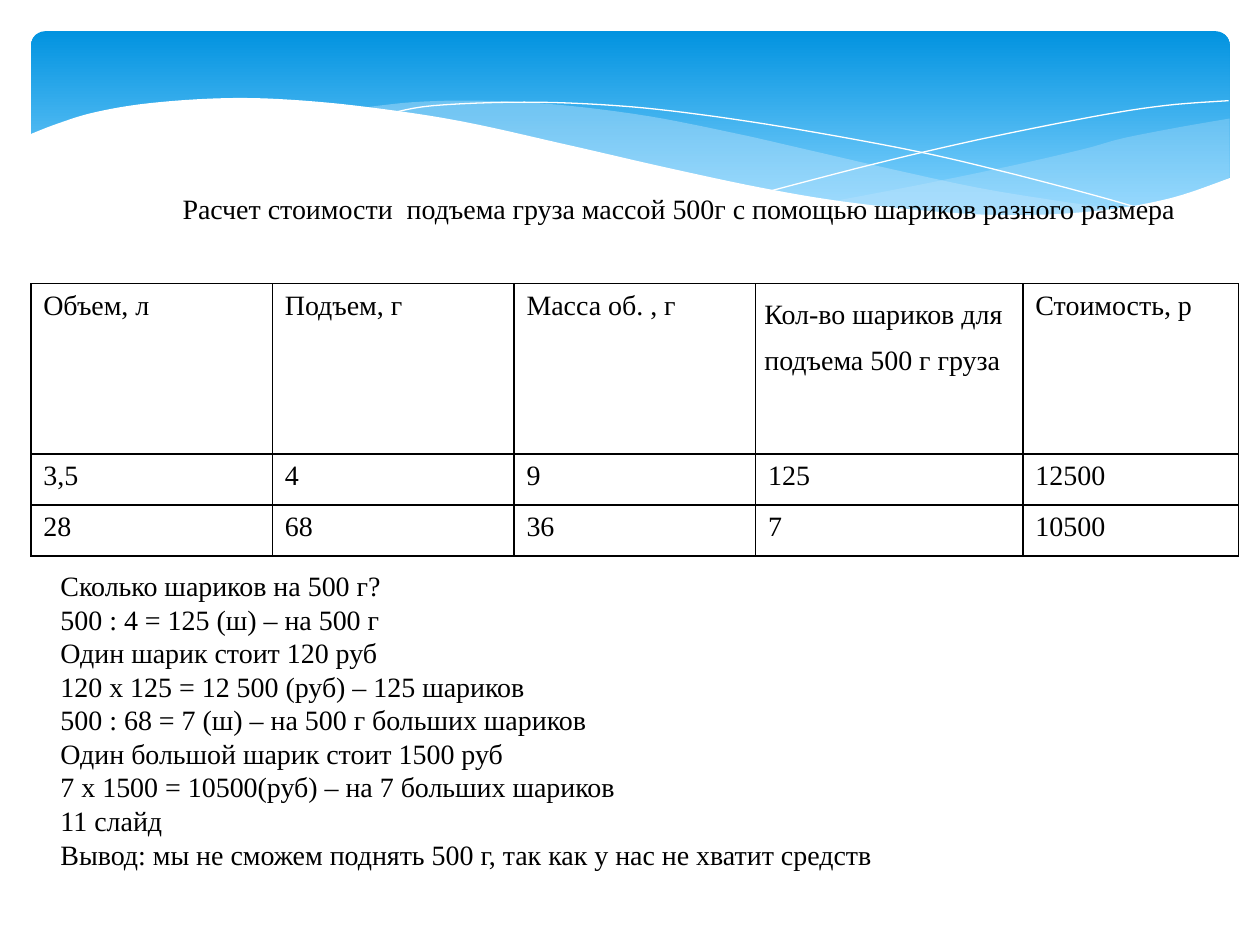
import pptx
import pptx.dml.color
import pptx.enum.shapes
import pptx.oxml
import pptx.oxml.ns
import pptx.util

Cm, Pt = pptx.util.Cm, pptx.util.Pt
qn = pptx.oxml.ns.qn

COLORS = {"deep": "0293E0", "sky": "83D3FE", "haze": "C6E7FC",
          "white": "FFFFFF", "ink": "000000"}

# Curves of the header band, in centimetres
RIGHT_HAZE = [
    [(24.79, 2.39), (23.75, 2.57), (22.63, 2.79), (21.87, 3), (20.45, 3.33),
     (18.52, 3.73), (16.79, 4.06)],
    [(16.79, 4.06), (17.91, 4.19), (19.23, 4.32), (20.68, 4.37),
     (21.92, 4.32), (22.99, 4.14), (23.93, 3.91), (24.79, 3.58)]]
CENTRE_HAZE = [
    [(7.26, 2.18), (8.33, 2.06), (9.65, 2.03), (11.23, 2.11), (13.06, 2.34),
     (14.83, 2.69), (15.98, 2.95), (17.93, 3.4), (19.69, 3.78),
     (21.26, 4.04), (22.68, 4.24)],
    [(22.68, 4.24), (21.77, 4.34), (20.78, 4.39), (19.63, 4.37),
     (18.34, 4.27), (16.89, 4.09), (15.27, 3.81), (13.46, 3.43),
     (11.4, 2.95), (9.73, 2.57), (8.69, 2.39), (7.26, 2.18)]]
FALLING_LINE = [
    [(7.85, 2.29), (8.74, 2.13), (10.57, 2.06), (12.42, 2.13), (14.12, 2.31),
     (16.15, 2.62), (18.47, 3.05), (20.19, 3.45), (22.07, 3.94),
     (23.04, 4.22)]]
RISING_LINE = [
    [(15.57, 3.84), (17.65, 3.3), (19.71, 2.82), (22, 2.36), (23.47, 2.13),
     (24.77, 2.03)]]
WHITE_WAVE = [
    [(24.82, 3.58), (23.62, 3.99), (22.23, 4.24), (20.55, 4.34), (18.9, 4.27),
     (16.97, 4.06), (15.32, 3.78), (13.44, 3.38), (11.35, 2.9), (9.27, 2.44),
     (7.42, 2.16), (5.84, 2.01), (4.5, 1.98), (3.02, 2.08), (1.93, 2.26),
     (1.17, 2.49), (0.58, 2.72)],
    [(0.58, 5.68), (24.82, 5.68)]]

TITLE = ("Расчет стоимости  подъема груза массой 500г "
         "с помощью шариков разного размера")
ROWS = [
    ["Объем, л", "Подъем, г", "Масса об. , г",
     "Кол-во шариков для подъема 500 г груза", "Стоимость, р"],
    ["3,5", "4", "9", "125", "12500"],
    ["28", "68", "36", "7", "10500"],
]
SOLUTION = [
    "Сколько шариков на 500 г?",
    "500 : 4 = 125 (ш) – на 500 г",
    "Один шарик стоит 120 руб",
    "120 х 125 = 12 500 (руб) – 125 шариков",
    "500 : 68 = 7 (ш) – на 500 г больших шариков",
    "Один большой шарик стоит 1500 руб",
    "7 х 1500 = 10500(руб) – на 7 больших шариков",
    "11 слайд",
    "Вывод: мы не сможем поднять 500 г, так как у нас не хватит средств",
]


def rgb(name):
    return pptx.dml.color.RGBColor.from_string(COLORS[name])


def smooth(points, steps=6):
    """Return the points of a Catmull-Rom curve through the given points."""
    if len(points) < 3:
        return points
    ends = [points[0], *points, points[-1]]
    curve = [points[0]]
    for a, b, c, d in zip(ends, ends[1:], ends[2:], ends[3:]):
        for i in range(1, steps + 1):
            t = i / steps
            curve.append(tuple(
                q + t / 2 * (r - p + t * (2 * p - 5 * q + 4 * r - s
                                          + t * (3 * (q - r) + s - p)))
                for p, q, r, s in zip(a, b, c, d)))
    return curve


def write_text(tf, lines, size=16, font="Times New Roman", color="ink",
               spacing=None):
    tf.word_wrap = True
    for i, line in enumerate(lines):
        p = tf.paragraphs[0] if i == 0 else tf.add_paragraph()
        p.line_spacing = spacing
        r = p.add_run()
        r.text = line
        r.font.size = Pt(size)
        r.font.name = font
        r.font.bold = False
        r.font.color.rgb = rgb(color)


class SlideBuilder:
    def __init__(self, slide, border=1):
        self.slide = slide
        self.border = border

    def band(self, left, top, width, height, radius):
        sp = self.slide.shapes.add_shape(
            pptx.enum.shapes.MSO_SHAPE.ROUNDED_RECTANGLE,
            Cm(left), Cm(top), Cm(width), Cm(height))
        sp.adjustments[0] = radius
        sp.shadow.inherit = False
        sp.line.fill.background()
        sp.fill.gradient()
        sp.fill.gradient_angle = 270
        for stop, (pos, name) in zip(sp.fill.gradient_stops,
                                     [(0, "deep"), (0.9, "sky")]):
            stop.position = pos
            stop.color.rgb = rgb(name)

    def curve(self, parts, fill=None, opacity=100, line=None):
        """Draw a closed filled outline, or an open line if fill is None."""
        points = [(Cm(x), Cm(y)) for part in parts for x, y in smooth(part)]
        builder = self.slide.shapes.build_freeform(*points[0])
        builder.add_line_segments(points[1:], close=fill is not None)
        sp = builder.convert_to_shape()
        sp.shadow.inherit = False
        if fill:
            sp.fill.solid()
            sp.fill.fore_color.rgb = rgb(fill)
            if opacity < 100:
                alpha = pptx.oxml.parse_xml(
                    f'<a:alpha {pptx.oxml.ns.nsdecls("a")} '
                    f'val="{opacity * 1000}"/>')
                sp.element.find(".//" + qn("a:srgbClr")).append(alpha)
        else:
            sp.fill.background()
        if line:
            sp.line.color.rgb = rgb(line)
            sp.line.width = Pt(0)
        else:
            sp.line.fill.background()

    def text(self, lines, left, top, width, height, inset=(0.25, 0.13)):
        sp = self.slide.shapes.add_textbox(
            Cm(left), Cm(top), Cm(width), Cm(height))
        tf = sp.text_frame
        tf.margin_left, tf.margin_top = map(Cm, inset)
        write_text(tf, lines)

    def table(self, rows, left, top, widths, heights):
        table = self.slide.shapes.add_table(
            len(rows), len(widths), Cm(left), Cm(top),
            Cm(sum(widths)), Cm(sum(heights))).table
        table.first_row = table.horz_banding = False
        for col, width in zip(table.columns, widths):
            col.width = Cm(width)
        for row, height, values in zip(table.rows, heights, rows):
            row.height = Cm(height)
            for cell, value in zip(row.cells, values):
                write_text(cell.text_frame, [value])
                self.outline(cell)
                cell.fill.background()
        return table

    def outline(self, cell):
        for side in ("lnL", "lnR", "lnT", "lnB"):
            cell._tc.get_or_add_tcPr().append(pptx.oxml.parse_xml(
                f'<a:{side} {pptx.oxml.ns.nsdecls("a")} '
                f'w="{Pt(self.border)}"><a:solidFill>'
                f'<a:srgbClr val="{COLORS["ink"]}"/></a:solidFill>'
                f'</a:{side}>'))


def main():
    prs = pptx.Presentation()
    prs.slide_width, prs.slide_height = Cm(25.4), Cm(19.05)
    s = SlideBuilder(prs.slides.add_slide(prs.slide_layouts[6]))

    s.band(0.63, 0.63, 24.16, 3.96, radius=0.071)
    s.curve(RIGHT_HAZE, fill="haze", opacity=29)
    s.curve(CENTRE_HAZE, fill="haze", opacity=40)
    s.curve(FALLING_LINE, line="white")
    s.curve(RISING_LINE, line="white")
    s.curve(WHITE_WAVE, fill="white")

    s.text([TITLE], 0.89, 3.63, 23.8, 1.02, inset=(2.79, 0.23))
    table = s.table(ROWS, 0.62, 5.72, [4.87, 4.87, 4.87, 5.39, 4.35],
                    [3.43, 1.03, 1.03])
    count = table.cell(0, 3)
    count.margin_left = count.margin_right = Cm(0.18)
    count.margin_top = count.margin_bottom = 0
    count.text_frame.paragraphs[0].line_spacing = 1.5
    s.text(SOLUTION, 0.97, 11.33, 22.6, 6.4)

    prs.save("out.pptx")


if __name__ == "__main__":
    main()
